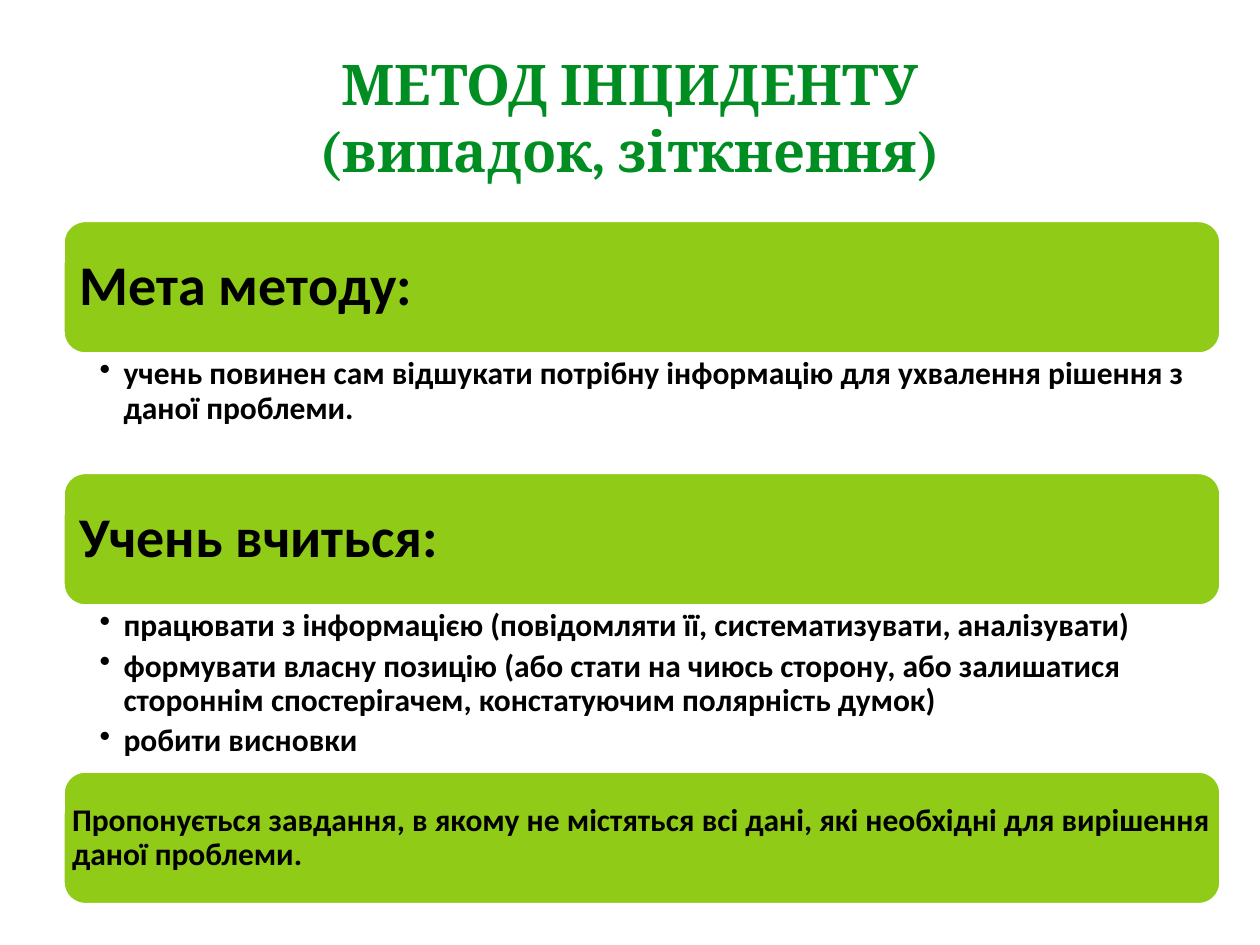
from dataclasses import dataclass

from lxml.etree import SubElement
from pptx import Presentation
from pptx.dml.color import RGBColor
from pptx.enum.shapes import MSO_SHAPE as Preset
from pptx.enum.text import MSO_ANCHOR as Anchor, PP_ALIGN as Align
from pptx.oxml.ns import qn
from pptx.util import Inches, Pt


@dataclass(frozen=True)
class Theme:
    """Colours, fonts and type sizes of the slide."""
    title: RGBColor = RGBColor(0x00, 0x8E, 0x22)
    band: RGBColor = RGBColor(0x8F, 0xCB, 0x17)
    outline: RGBColor = RGBColor(0xFF, 0xFF, 0xFF)
    text: RGBColor = RGBColor(0x00, 0x00, 0x00)
    title_font: str = "Cambria"
    body_font: str = "Calibri"
    large: int = 32
    small: int = 18


THEME = Theme()
LEFT, WIDTH, BAND_HEIGHT = 0.5, 9.19, 1.06
CORNER_INSET = 0.05
BULLET_INDENT = 0.19


def add_bullet(paragraph):
    """Give a paragraph a round bullet with a hanging indent."""
    properties = paragraph._p.get_or_add_pPr()
    properties.set("marL", str(Inches(BULLET_INDENT)))
    properties.set("indent", str(-Inches(BULLET_INDENT)))
    SubElement(properties, qn("a:buChar")).set("char", "•")


def write_text(shape, lines, *, size, insets, font=THEME.body_font, color=THEME.text,
               align=Align.LEFT, anchor=Anchor.MIDDLE, bullets=False,
               line_spacing=0.9, space_after=0):
    """Write one formatted paragraph for each line of text."""
    frame = shape.text_frame
    frame.word_wrap = True
    frame.vertical_anchor = anchor
    (frame.margin_left, frame.margin_top,
     frame.margin_right, frame.margin_bottom) = map(Inches, insets)
    for index, line in enumerate(lines):
        paragraph = frame.add_paragraph() if index else frame.paragraphs[0]
        if bullets:
            add_bullet(paragraph)
        paragraph.text = line
        paragraph.alignment = align
        paragraph.line_spacing = line_spacing
        paragraph.space_after = Pt(space_after)
        paragraph.font.name = font
        paragraph.font.size = Pt(size)
        paragraph.font.bold = True
        paragraph.font.color.rgb = color


def add_title(slide, lines, left, top, width, height):
    """Place the centred title in its box."""
    box = slide.shapes.add_textbox(*map(Inches, (left, top, width, height)))
    write_text(box, lines, size=THEME.large, insets=(0.1, 0.05, 0.1, 0.05),
               font=THEME.title_font, color=THEME.title, align=Align.CENTER,
               line_spacing=1.0)


def add_band(slide, text, left, top, width, height, *, size, inset):
    """Place a rounded green band with its text."""
    band = slide.shapes.add_shape(Preset.ROUNDED_RECTANGLE,
                                  *map(Inches, (left, top, width, height)))
    band.shadow.inherit = False
    band.fill.solid()
    band.fill.fore_color.rgb = THEME.band
    band.line.color.rgb = THEME.outline
    band.line.width = Pt(2)
    write_text(band, [text], size=size, insets=(inset - CORNER_INSET,) * 4)


def add_bullets(slide, lines, left, top, width, height):
    """Place a bulleted list in its box."""
    box = slide.shapes.add_textbox(*map(Inches, (left, top, width, height)))
    write_text(box, lines, size=THEME.small, insets=(0.29, 0.03, 0.14, 0.03),
               anchor=Anchor.TOP, bullets=True, space_after=3.6)


def add_section(slide, heading, lines, left, top, width, height):
    """Place a heading band with its bullets filling the rest of the box."""
    add_band(slide, heading, left, top, width, BAND_HEIGHT, size=THEME.large, inset=0.13)
    add_bullets(slide, lines, left, top + BAND_HEIGHT, width, height - BAND_HEIGHT)


def main():
    """Build and save the slide."""
    presentation = Presentation()
    presentation.slide_width = Inches(10)
    presentation.slide_height = Inches(7.5)
    slide = presentation.slides.add_slide(presentation.slide_layouts[6])

    add_title(slide, ["МЕТОД ІНЦИДЕНТУ", "(випадок, зіткнення)"], LEFT, 0.3, 9, 1.25)
    add_section(slide, "Мета методу:", [
        "учень повинен сам відшукати потрібну інформацію для ухвалення рішення з даної проблеми.",
    ], LEFT, 1.75, WIDTH, 2)
    add_section(slide, "Учень вчиться:", [
        "працювати з інформацією (повідомляти її, систематизувати, аналізувати)",
        "формувати власну позицію (або стати на чиюсь сторону, або залишатися "
        "стороннім спостерігачем, констатуючим полярність думок)",
        "робити висновки",
    ], LEFT, 3.75, WIDTH, 2.36)
    add_band(slide, "Пропонується завдання, в якому не містяться всі дані, "
                    "які необхідні для вирішення даної проблеми.",
             LEFT, 6.12, WIDTH, BAND_HEIGHT, size=THEME.small, inset=0.07)

    presentation.save("out.pptx")


if __name__ == "__main__":
    main()
